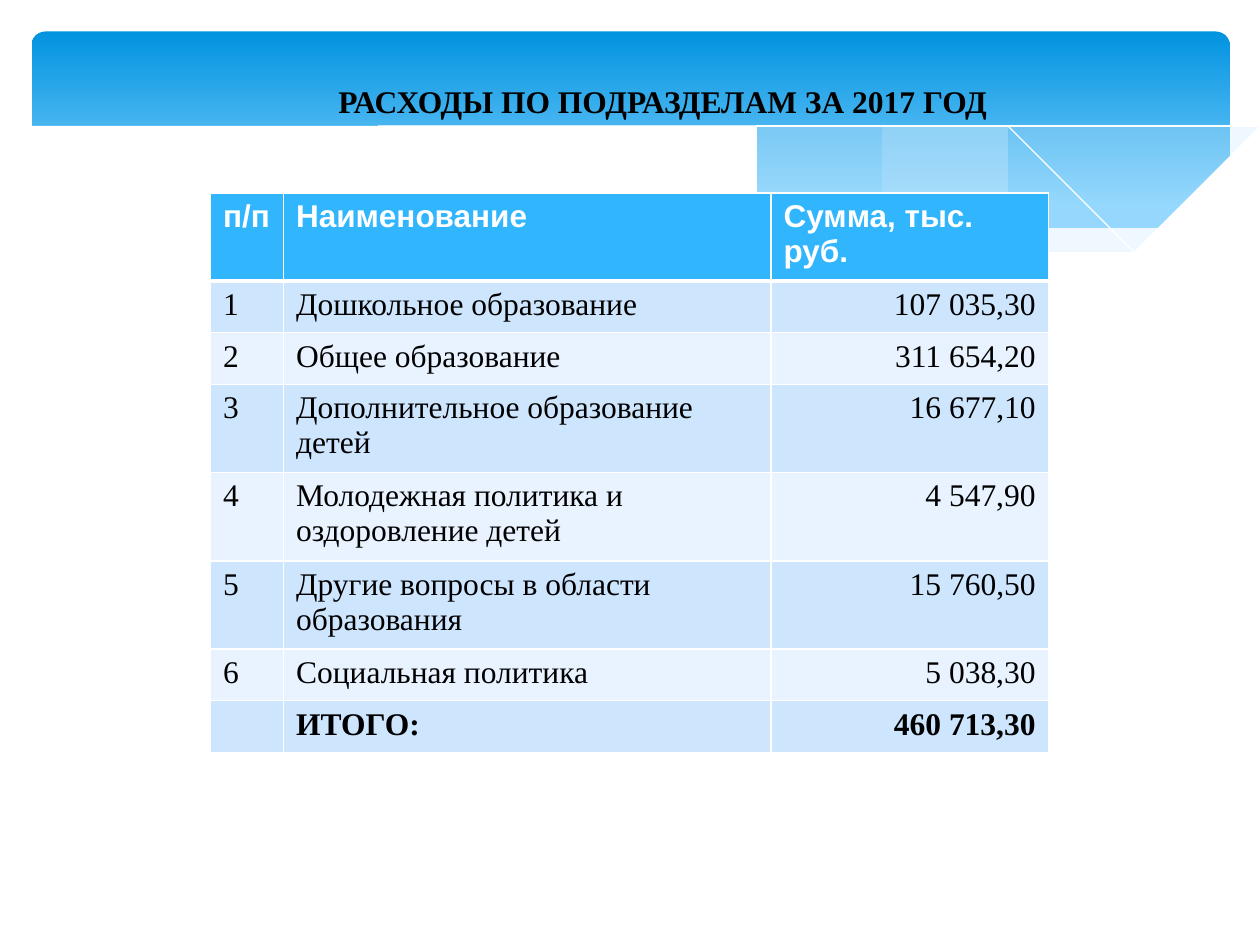
from dataclasses import dataclass

from lxml.etree import SubElement
from pptx import Presentation
from pptx.dml.color import RGBColor
from pptx.enum.shapes import MSO_SHAPE
from pptx.enum.text import MSO_ANCHOR, PP_ALIGN
from pptx.oxml.ns import qn
from pptx.util import Inches, Pt


@dataclass(frozen=True)
class Theme:
    band_top: str = "0293E0"
    band_bottom: str = "83D3FE"
    wave: str = "C6E7FC"
    white: str = "FFFFFF"
    text: str = "000000"
    header: str = "31B6FD"
    odd_row: str = "CEE5FE"
    even_row: str = "E8F3FF"
    body_font: str = "Times New Roman"
    header_font: str = "Arial"
    size: int = 18


def rgb(value):
    return RGBColor.from_string(value)


def smooth(knots, steps=5):
    """Points of a Catmull-Rom curve through the knots."""
    ends = [knots[0], *knots, knots[-1]]
    points = [knots[0]]
    for a, b, c, d in zip(ends, ends[1:], ends[2:], ends[3:]):
        for t in (i / steps for i in range(1, steps + 1)):
            points.append(tuple(
                (2 * q + (r - p) * t + (2 * p - 5 * q + 4 * r - s) * t**2
                 + (3 * q - p - 3 * r + s) * t**3) / 2
                for p, q, r, s in zip(a, b, c, d)))
    return points


class SlideBuilder:
    def __init__(self, slide, theme):
        self.s = slide
        self.theme = theme

    def band(self, x, y, w, h, radius):
        sp = self.s.shapes.add_shape(MSO_SHAPE.ROUNDED_RECTANGLE, *map(Inches, (x, y, w, h)))
        sp.shadow.inherit = False
        sp.adjustments[0] = radius
        sp.line.fill.background()
        sp.fill.gradient()
        sp.fill.gradient_angle = 270
        stops = ((0, self.theme.band_top), (0.9, self.theme.band_bottom))
        for stop, (position, color) in zip(sp.fill.gradient_stops, stops):
            stop.position = position
            stop.color.rgb = rgb(color)

    def outline(self, points, close):
        fb = self.s.shapes.build_freeform(*points[0], scale=Inches(1))
        fb.add_line_segments(points[1:], close=close)
        sp = fb.convert_to_shape()
        sp.shadow.inherit = False
        return sp

    def area(self, points, color, opacity=100):
        sp = self.outline(points, close=True)
        sp.line.fill.background()
        sp.fill.solid()
        sp.fill.fore_color.rgb = rgb(color)
        if opacity < 100:
            clr = sp.element.spPr.find(qn("a:solidFill")).find(qn("a:srgbClr"))
            SubElement(clr, qn("a:alpha"), val=str(opacity * 1000))

    def curve(self, points):
        sp = self.outline(points, close=False)
        sp.fill.background()
        sp.line.color.rgb = rgb(self.theme.white)
        sp.line.width = Pt(0)

    def put_text(self, tf, text, align=PP_ALIGN.LEFT, **changes):
        p = tf.paragraphs[0]
        p.alignment = align
        if not text:
            return
        r = p.add_run()
        r.text = text
        style = {"name": self.theme.body_font, "size": Pt(self.theme.size),
                 "bold": False, "color": self.theme.text, **changes}
        r.font.color.rgb = rgb(style.pop("color"))
        for key, value in style.items():
            setattr(r.font, key, value)

    def title(self, text, x, y, w, h):
        tf = self.s.shapes.add_textbox(*map(Inches, (x, y, w, h))).text_frame
        tf.word_wrap = True
        self.put_text(tf, text, PP_ALIGN.CENTER, bold=True)

    def borders(self, cell, bottom):
        tc_pr = cell._tc.get_or_add_tcPr()
        for side, width in (("L", 1), ("R", 1), ("T", 1), ("B", bottom)):
            ln = SubElement(tc_pr, qn(f"a:ln{side}"), w=str(Pt(width)))
            fill = SubElement(ln, qn("a:solidFill"))
            SubElement(fill, qn("a:srgbClr"), val=self.theme.white)

    def table(self, rows, x, y, widths, heights):
        th = self.theme
        frame = self.s.shapes.add_table(
            len(rows), len(widths), *map(Inches, (x, y, sum(widths), sum(heights))))
        table = frame.table
        for column, width in zip(table.columns, widths):
            column.width = Inches(width)
        for i, (values, height) in enumerate(zip(rows, heights)):
            table.rows[i].height = Inches(height)
            if i == 0:
                color = th.header
                style = {"name": th.header_font, "color": th.white, "bold": True}
            else:
                color = th.odd_row if i % 2 else th.even_row
                style = {"bold": i == len(rows) - 1}
            for j, value in enumerate(values):
                cell = table.cell(i, j)
                self.borders(cell, 3 if i == 0 else 1)
                cell.fill.solid()
                cell.fill.fore_color.rgb = rgb(color)
                cell.vertical_anchor = MSO_ANCHOR.TOP
                align = PP_ALIGN.RIGHT if i and j == 2 else PP_ALIGN.LEFT
                self.put_text(cell.text_frame, value, align, **style)


RIGHT_WAVE = (
    smooth([(9.76, 0.94), (9.35, 1.01), (8.61, 1.18), (7.79, 1.37), (7.06, 1.52), (6.61, 1.6)])
    + smooth([(6.61, 1.6), (7.18, 1.67), (7.69, 1.71), (8.14, 1.72), (8.63, 1.7),
              (9.05, 1.63), (9.42, 1.54), (9.76, 1.41)]))
MIDDLE_WAVE = (
    smooth([(8.93, 1.67), (8.37, 1.6), (7.41, 1.42), (6.29, 1.16), (5.41, 0.97),
            (4.65, 0.86), (3.8, 0.8), (3.28, 0.81), (2.86, 0.86)])
    + smooth([(2.86, 0.86), (3.62, 0.97), (4.49, 1.16), (5.66, 1.43), (6.5, 1.58),
              (7.22, 1.68), (7.85, 1.72), (8.38, 1.72), (8.93, 1.67)]))
FALLING_LINE = smooth([(3.09, 0.9), (3.44, 0.84), (4.16, 0.81), (5.1, 0.86), (6.08, 0.98),
                       (6.95, 1.14), (7.95, 1.36), (9.07, 1.66)])
RISING_LINE = smooth([(6.13, 1.51), (6.95, 1.3), (7.76, 1.11), (8.66, 0.93),
                      (9.24, 0.84), (9.75, 0.8)])
WHITE_WAVE = smooth([(9.77, 1.41), (9.4, 1.54), (8.99, 1.64), (8.5, 1.7), (7.93, 1.71),
                     (7.26, 1.67), (6.47, 1.56), (5.55, 1.39), (4.47, 1.14), (3.65, 0.96),
                     (2.92, 0.85), (2.3, 0.79), (1.77, 0.78), (1.32, 0.81), (0.85, 0.87),
                     (0.52, 0.96), (0.23, 1.07)]) + [(0.23, 2.24), (9.77, 2.24)]

EXPENSES = [
    ("п/п", "Наименование", "Сумма, тыс. руб."),
    ("1", "Дошкольное образование", "107 035,30"),
    ("2", "Общее образование", "311 654,20"),
    ("3", "Дополнительное образование детей", "16 677,10"),
    ("4", "Молодежная политика и оздоровление детей", "4 547,90"),
    ("5", "Другие вопросы в области образования", "15 760,50"),
    ("6", "Социальная политика", "5 038,30"),
    ("", "ИТОГО:", "460 713,30"),
]
ONE_LINE, TWO_LINES = 0.41, 0.7


def main():
    prs = Presentation()
    prs.slide_width, prs.slide_height = Inches(10), Inches(7.5)
    theme = Theme()
    b = SlideBuilder(prs.slides.add_slide(prs.slide_layouts[6]), theme)
    b.band(0.25, 0.25, 9.51, 1.56, 0.071)
    b.area(RIGHT_WAVE, theme.wave, 29)
    b.area(MIDDLE_WAVE, theme.wave, 40)
    b.curve(FALLING_LINE)
    b.curve(RISING_LINE)
    b.area(WHITE_WAVE, theme.white)
    b.title("РАСХОДЫ ПО ПОДРАЗДЕЛАМ ЗА 2017 ГОД", 0.85, 0.6, 8.82, 0.4)
    heights = [TWO_LINES if i in (0, 3, 4, 5) else ONE_LINE for i in range(len(EXPENSES))]
    b.table(EXPENSES, 1.67, 1.53, (0.58, 3.87, 2.2), heights)
    prs.save("out.pptx")


if __name__ == "__main__":
    main()
